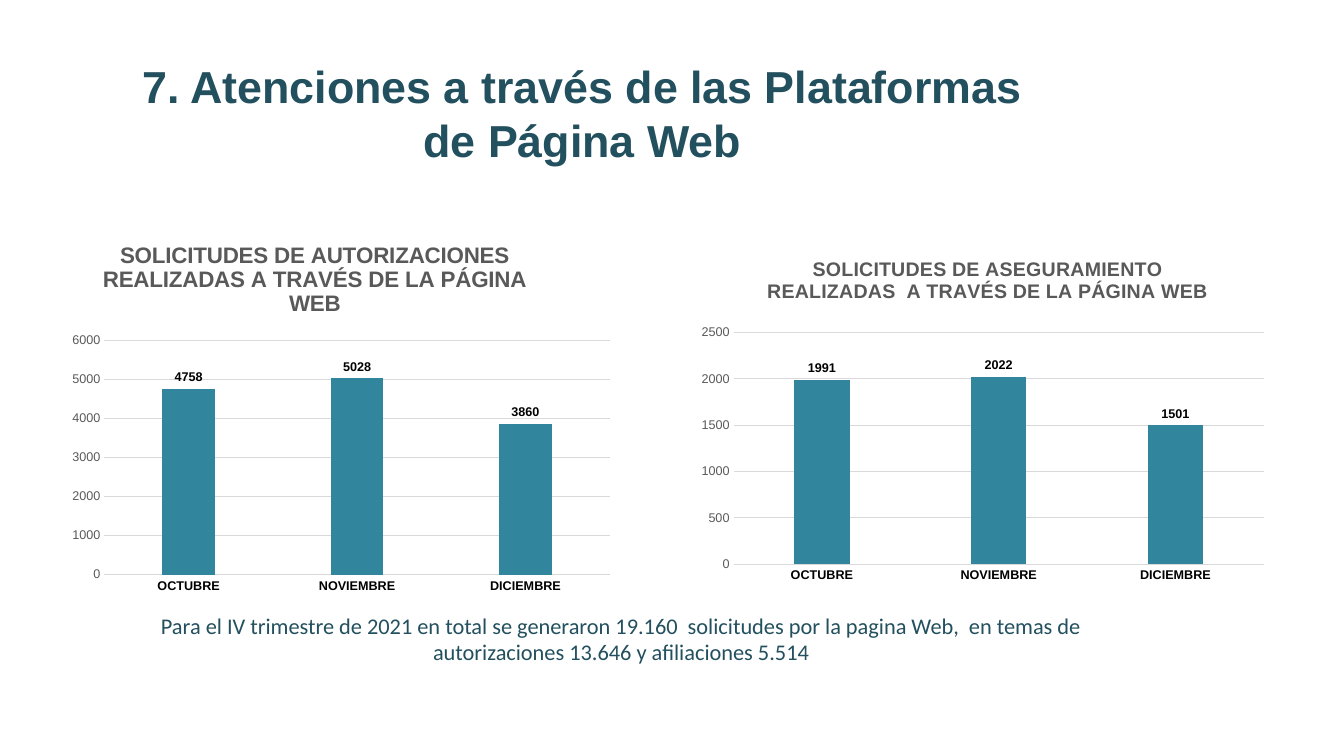
from lxml import etree
from pptx import Presentation
from pptx.chart.data import CategoryChartData
from pptx.dml.color import RGBColor
from pptx.enum.chart import XL_CHART_TYPE as ChartType, XL_LABEL_POSITION as LabelPosition
from pptx.enum.chart import XL_TICK_MARK as TickMark
from pptx.enum.text import PP_ALIGN as Align
from pptx.oxml import parse_xml
from pptx.oxml.ns import nsdecls, qn
from pptx.util import Cm, Pt

TEAL, BAR, GREY, GRID, BLACK = "23505E", "31859C", "595959", "D9D9D9", "000000"
MONTHS = ["OCTUBRE", "NOVIEMBRE", "DICIEMBRE"]


def color(value):
    return RGBColor.from_string(value)


def style_font(font, size, tint, name="Arial", bold=False):
    font.size, font.name, font.bold = Pt(size), name, bold
    font.color.rgb = color(tint)


def add_text(page, box, text, **style):
    frame = page.shapes.add_textbox(*map(Cm, box)).text_frame
    frame.word_wrap = True
    para = frame.paragraphs[0]
    para.alignment = Align.CENTER
    span = para.add_run()
    span.text = text
    style_font(span.font, **style)


def make_layout(x, y, w=None, h=None):
    """Manual layout in fractions of the chart; a size marks the inner plot."""
    layout = parse_xml(f"<c:layout {nsdecls('c')}><c:manualLayout/></c:layout>")
    settings = [("xMode", "edge"), ("yMode", "edge"), ("x", x), ("y", y)]
    if w is not None:
        settings = [("layoutTarget", "inner")] + settings + [("w", w), ("h", h)]
    for tag, value in settings:
        etree.SubElement(layout[0], qn(f"c:{tag}")).set("val", str(value))
    return layout


def place(element, layout, index):
    for old in element.findall(qn("c:layout")):
        element.remove(old)
    element.insert(index, layout)


def add_month_chart(page, box, title, title_size, title_at, plot, values, top, step):
    data = CategoryChartData(number_format="General")
    data.categories = MONTHS
    data.add_series("Series 1", values)
    chart = page.shapes.add_chart(ChartType.COLUMN_CLUSTERED, *map(Cm, box), data).chart
    style_font(chart.font, 10, BLACK)
    chart.has_legend = False

    # Title
    chart.has_title = True
    span = chart.chart_title.text_frame.paragraphs[0].add_run()
    span.text = title
    style_font(span.font, title_size, GREY, bold=True)
    chart.chart_title.include_in_layout = False
    title_xml = chart.element.find(".//" + qn("c:title"))
    place(title_xml, make_layout(*title_at), 1)
    place(chart.element.find(".//" + qn("c:plotArea")), make_layout(*plot), 0)

    # Axes
    months, scale = chart.category_axis, chart.value_axis
    for axis in (months, scale):
        axis.major_tick_mark = axis.minor_tick_mark = TickMark.NONE
    style_font(months.tick_labels.font, 9, BLACK, bold=True)
    style_font(scale.tick_labels.font, 9, GREY)
    scale.minimum_scale, scale.maximum_scale, scale.major_unit = 0, top, step
    scale.format.line.fill.background()
    for line in (months.format.line, scale.major_gridlines.format.line):
        line.color.rgb = color(GRID)
        line.width = Pt(0.75)

    # Bars and their values
    bars = chart.plots[0]
    bars.vary_by_categories = False
    bars.gap_width, bars.overlap = 219, -27
    fill = bars.series[0].format.fill
    fill.solid()
    fill.fore_color.rgb = color(BAR)
    bars.has_data_labels = True
    labels = bars.data_labels
    labels.show_value = True
    labels.position = LabelPosition.OUTSIDE_END
    style_font(labels.font, 9, BLACK, bold=True)


def main():
    deck = Presentation()
    deck.slide_width, deck.slide_height = Cm(33.87), Cm(19.05)
    page = deck.slides.add_slide(deck.slide_layouts[6])

    # Charts
    add_month_chart(
        page, (1.5, 5.77, 14.15, 9.37),
        "SOLICITUDES DE AUTORIZACIONES REALIZADAS A TRAVÉS DE LA PÁGINA WEB", 16,
        title_at=(0.07, 0.02), plot=(0.08, 0.3, 0.9, 0.63),
        values=(4758, 5028, 3860), top=6000, step=1000)
    add_month_chart(
        page, (17.27, 5.92, 15.19, 9.12),
        "SOLICITUDES DE ASEGURAMIENTO REALIZADAS  A TRAVÉS DE LA PÁGINA WEB", 14,
        title_at=(0.13, 0.05), plot=(0.08, 0.27, 0.88, 0.64),
        values=(1991, 2022, 1501), top=2500, step=500)

    # Heading and summary
    add_text(page, (2.97, 1.35, 23.42, 3),
             "7. Atenciones a través de las Plataformas de Página Web",
             size=32, tint=TEAL, bold=True)
    add_text(page, (3.45, 15.29, 24.41, 2.31),
             "Para el IV trimestre de 2021 en total se generaron 19.160  solicitudes por la "
             "pagina Web,  en temas de autorizaciones 13.646 y afiliaciones 5.514",
             size=16, tint=TEAL, name="Calibri")

    deck.save("out.pptx")


if __name__ == "__main__":
    main()
